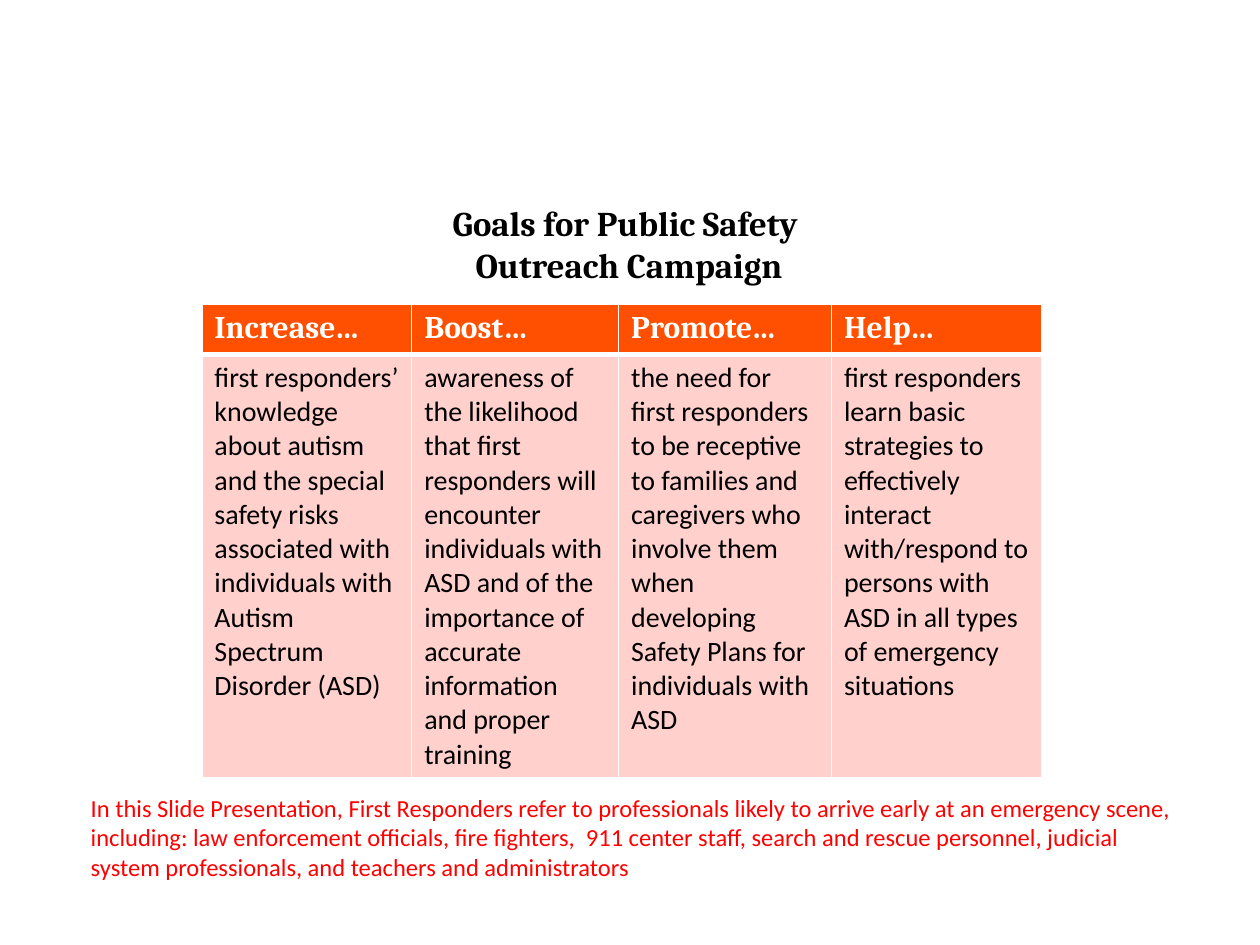
from lxml.etree import SubElement
from pptx import Presentation
from pptx.dml.color import RGBColor
from pptx.enum.text import MSO_ANCHOR, PP_ALIGN
from pptx.oxml.ns import qn
from pptx.util import Cm, Pt

COLORS = {
    "ink": "000000",
    "header": "FE5000",
    "body": "FFD0CC",
    "white": "FFFFFF",
    "note": "FF0000",
}

TITLE = ["Goals for Public Safety ", "Outreach Campaign"]
GOALS = [
    ("Increase…", "first responders’ knowledge about autism and the special safety risks "
                  "associated with individuals with Autism Spectrum Disorder (ASD)"),
    ("Boost…", "awareness of the likelihood that first responders will encounter individuals "
               "with ASD and of the importance of accurate information and proper training"),
    ("Promote…", "the need for first responders to be receptive to families and caregivers who "
                 "involve them when developing Safety Plans for individuals with ASD"),
    ("Help…", "first responders learn basic strategies to effectively interact with/respond to "
              "persons with ASD in all types of emergency situations"),
]
NOTE = ("In this Slide Presentation, First Responders refer to professionals likely to arrive early "
        "at an emergency scene, including: law enforcement officials, fire fighters,  911 center "
        "staff, search and rescue personnel, judicial system professionals, and teachers and "
        "administrators")

COLUMN_WIDTHS = [4.23, 4.17, 4.29, 4.25]
ROW_HEIGHTS = [0.96, 8.54]
ROW_STYLES = [
    {"font": "Cambria", "size": 18, "color": "white", "bold": True},
    {"font": "Calibri", "size": 16, "color": "ink"},
]
ROW_FILLS = ["header", "body"]
# Border widths in points: left, right, top, bottom
ROW_BORDERS = [(1, 1, 1, 3), (1, 1, 3, 1)]


def write(frame, *lines, font="Calibri", size=14, color="ink", bold=False, align=PP_ALIGN.LEFT):
    """Fill the first paragraph, with a line break between lines."""
    frame.word_wrap = True
    paragraph = frame.paragraphs[0]
    paragraph.alignment = align
    for index, line in enumerate(lines):
        if index:
            paragraph.add_line_break()
        run = paragraph.add_run()
        run.text = line
        run.font.name = font
        run.font.size = Pt(size)
        run.font.bold = bold
        run.font.color.rgb = RGBColor.from_string(COLORS[color])


def style_cell(cell, fill, borders):
    properties = cell._tc.get_or_add_tcPr()
    for side, width in zip(("lnL", "lnR", "lnT", "lnB"), borders):
        line = SubElement(properties, qn(f"a:{side}"), w=str(Pt(width)))
        solid = SubElement(line, qn("a:solidFill"))
        SubElement(solid, qn("a:srgbClr"), val=COLORS["white"])
    cell.fill.solid()
    cell.fill.fore_color.rgb = RGBColor.from_string(COLORS[fill])


def add_title(slide):
    title = slide.shapes.add_textbox(Cm(1.25), Cm(3.78), Cm(22.86), Cm(2.11)).text_frame
    title.vertical_anchor = MSO_ANCHOR.MIDDLE
    title.margin_top, title.margin_bottom = Cm(0.28), Cm(0.13)
    write(title, *TITLE, font="Cambria", size=19.8, bold=True, align=PP_ALIGN.CENTER)


def add_goals(slide):
    goals = slide.shapes.add_table(
        len(ROW_HEIGHTS), len(GOALS), Cm(4.07), Cm(6.13),
        Cm(sum(COLUMN_WIDTHS)), Cm(sum(ROW_HEIGHTS))).table
    for column, width in zip(goals.columns, COLUMN_WIDTHS):
        column.width = Cm(width)
    for row, height in zip(goals.rows, ROW_HEIGHTS):
        row.height = Cm(height)
    for column, goal in enumerate(GOALS):
        for row, text in enumerate(goal):
            cell = goals.cell(row, column)
            write(cell.text_frame, text, **ROW_STYLES[row])
            style_cell(cell, ROW_FILLS[row], ROW_BORDERS[row])


def add_note(slide):
    note = slide.shapes.add_textbox(Cm(1.58), Cm(15.86), Cm(22.53), Cm(2.05))
    write(note.text_frame, NOTE, color="note")


def main():
    presentation = Presentation()
    presentation.slide_width, presentation.slide_height = Cm(25.4), Cm(19.05)
    slide = presentation.slides.add_slide(presentation.slide_layouts[6])
    add_title(slide)
    add_goals(slide)
    add_note(slide)
    presentation.save("out.pptx")


if __name__ == "__main__":
    main()
